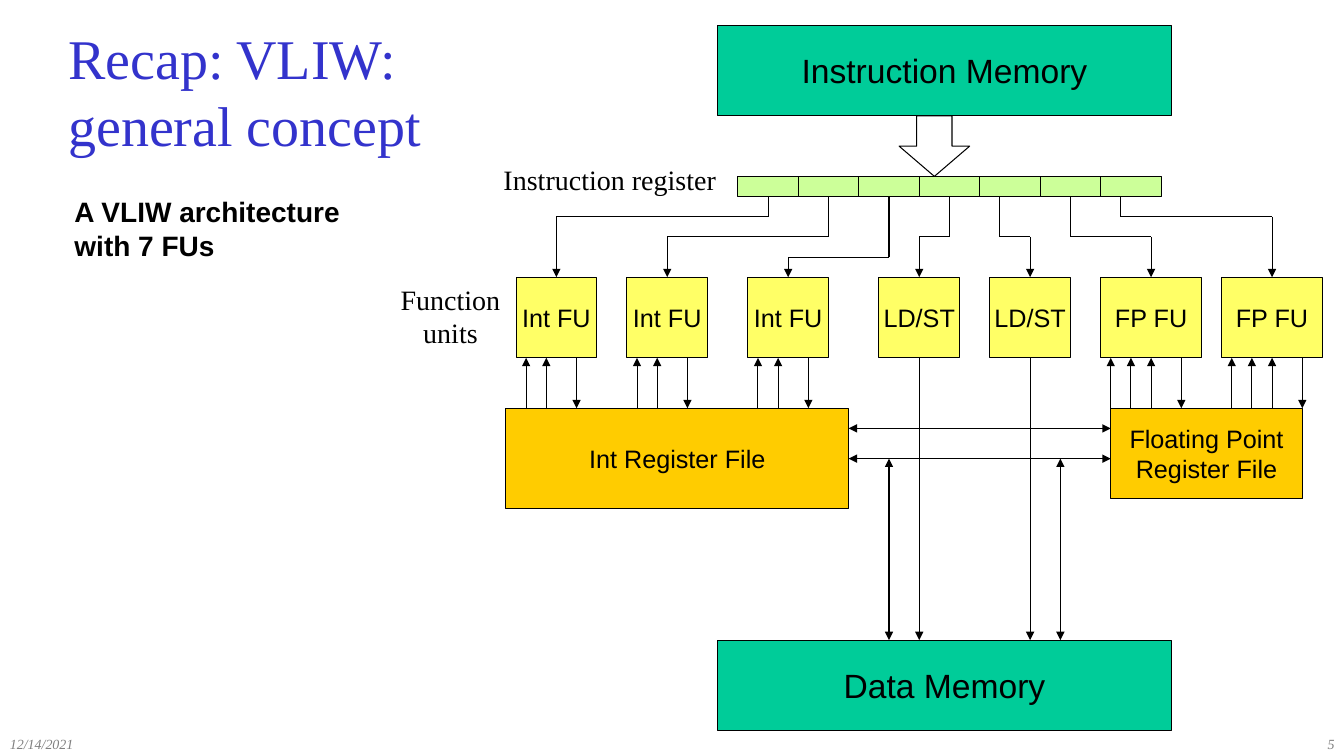
from dataclasses import dataclass
from typing import Optional

from lxml.etree import SubElement
from pptx import Presentation
from pptx.dml.color import RGBColor
from pptx.enum.shapes import MSO_CONNECTOR, MSO_SHAPE
from pptx.enum.text import MSO_ANCHOR, PP_ALIGN
from pptx.oxml.ns import qn
from pptx.shapes.autoshape import Shape
from pptx.shapes.connector import Connector
from pptx.slide import Slide
from pptx.text.text import TextFrame
from pptx.util import Pt

BLACK = RGBColor(0x00, 0x00, 0x00)
GREY = RGBColor(0x80, 0x80, 0x80)
TITLE_BLUE = RGBColor(0x33, 0x33, 0xCC)
MEMORY_GREEN = RGBColor(0x00, 0xCC, 0x99)
SLOT_GREEN = RGBColor(0xCC, 0xFF, 0x99)
UNIT_YELLOW = RGBColor(0xFF, 0xFF, 0x66)
FILE_ORANGE = RGBColor(0xFF, 0xCC, 0x00)

SANS = "Arial"
SERIF = "Times New Roman"
LINE_WIDTH = 0.75
TOP, BOTTOM, RIGHT = 0, 2, 3

SLOT_LEFT, SLOT_TOP, SLOT_WIDTH, SLOT_HEIGHT = 527.04, 126, 43.2, 14.4
SLOT_BOTTOM = SLOT_TOP + SLOT_HEIGHT
UNIT_TOP, UNIT_HEIGHT = 198, 57.6
UNIT_BOTTOM = UNIT_TOP + UNIT_HEIGHT
FILE_TOP = 291.6
MEMORY_LEFT, MEMORY_WIDTH, MEMORY_HEIGHT = 512.64, 324, 64.8
DATA_MEMORY_TOP = 457.2
INT_FILE_LEFT, INT_FILE_WIDTH = 361.44, 244.8
FP_FILE_LEFT = 793.44
BUS_Y = 327.6


@dataclass(frozen=True)
class TextStyle:
    size: float
    font: str = SANS
    color: RGBColor = BLACK
    bold: bool = False
    italic: bool = False
    align: PP_ALIGN = PP_ALIGN.LEFT
    anchor: MSO_ANCHOR = MSO_ANCHOR.TOP
    wrap: bool = True


@dataclass(frozen=True)
class Block:
    left: float
    top: float
    width: float
    height: float
    lines: tuple[str, ...] = ()
    style: Optional[TextStyle] = None
    fill: Optional[RGBColor] = None
    preset: MSO_SHAPE = MSO_SHAPE.RECTANGLE


@dataclass(frozen=True)
class FunctionUnit:
    label: str
    left: float
    width: float
    bend_level: int
    tap_shift: float = 0
    inputs: tuple[float, ...] = ()
    output: Optional[float] = None

    @property
    def center(self) -> float:
        return self.left + self.width / 2


@dataclass(frozen=True)
class Joint:
    shape: Shape
    side: int


MEMORY_TEXT = TextStyle(24, align=PP_ALIGN.CENTER, anchor=MSO_ANCHOR.MIDDLE, wrap=False)
UNIT_TEXT = TextStyle(18, align=PP_ALIGN.CENTER, anchor=MSO_ANCHOR.MIDDLE, wrap=False)
CAPTION_TEXT = TextStyle(20, SERIF, align=PP_ALIGN.CENTER, wrap=False)
INT_PORTS = {"inputs": (7.2, 21.6), "output": 43.2}
FP_PORTS = {"inputs": (7.2, 21.6, 36), "output": 57.6}

UNITS = (
    FunctionUnit("Int FU", 368.64, 57.6, 1, **INT_PORTS),
    FunctionUnit("Int FU", 447.84, 57.6, 2, **INT_PORTS),
    FunctionUnit("Int FU", 534.24, 57.6, 3, **INT_PORTS),
    FunctionUnit("LD/ST", 627.84, 57.6, 2),
    FunctionUnit("LD/ST", 707.04, 57.6, 2, tap_shift=-7.2),
    FunctionUnit("FP FU", 786.24, 72, 2, **FP_PORTS),
    FunctionUnit("FP FU", 872.64, 72, 1, tap_shift=-7.2, **FP_PORTS),
)
TEXTS = (
    Block(41.76, 18, 478, 92.9, ("Recap: VLIW:\vgeneral concept",),
          TextStyle(40, SERIF, TITLE_BLUE, anchor=MSO_ANCHOR.MIDDLE)),
    Block(0, 522, 128, 18, ("12/14/2021",), TextStyle(10, SERIF, GREY, italic=True)),
    Block(760.3, 522, 200, 18, ("5",),
          TextStyle(10, SERIF, GREY, italic=True, align=PP_ALIGN.RIGHT)),
    Block(46.1, 135.4, 210.2, 55.4, ("A VLIW architecture with 7 FUs",),
          TextStyle(20, bold=True)),
    Block(344.9, 112.3, 181.4, 34.6, ("Instruction register",), CAPTION_TEXT),
    Block(275, 198, 93.6, 59.8, ("Function", "units"), CAPTION_TEXT),
)
INT_FILE = Block(INT_FILE_LEFT, FILE_TOP, INT_FILE_WIDTH, 72,
                 ("Int Register File",), UNIT_TEXT, FILE_ORANGE)
FP_FILE = Block(FP_FILE_LEFT, FILE_TOP, 136.8, 64.8,
                ("Floating Point", "Register File"), UNIT_TEXT, FILE_ORANGE)
MEMORIES = tuple(
    Block(MEMORY_LEFT, top, MEMORY_WIDTH, MEMORY_HEIGHT, (name,), MEMORY_TEXT, MEMORY_GREEN)
    for name, top in (("Instruction Memory", 18), ("Data Memory", DATA_MEMORY_TOP))
)
FETCH_ARROW = Block(642.24, 82.8, 50.4, 43.2, preset=MSO_SHAPE.DOWN_ARROW)


def fill_text(frame: TextFrame, lines: tuple[str, ...], style: TextStyle) -> None:
    frame.word_wrap = style.wrap
    frame.vertical_anchor = style.anchor
    for index, line in enumerate(lines):
        paragraph = frame.add_paragraph() if index else frame.paragraphs[0]
        paragraph.alignment = style.align
        for part_index, part in enumerate(line.split("\v")):
            if part_index:
                paragraph.add_line_break()
            run = paragraph.add_run()
            run.text = part
            run.font.size = Pt(style.size)
            run.font.name = style.font
            run.font.bold = style.bold
            run.font.italic = style.italic
            run.font.color.rgb = style.color


def draw_text(slide: Slide, block: Block) -> None:
    box = slide.shapes.add_textbox(
        Pt(block.left), Pt(block.top), Pt(block.width), Pt(block.height))
    fill_text(box.text_frame, block.lines, block.style)


def draw_block(slide: Slide, block: Block) -> Shape:
    shape = slide.shapes.add_shape(
        block.preset, Pt(block.left), Pt(block.top), Pt(block.width), Pt(block.height))
    shape.shadow.inherit = False
    if block.fill is None:
        shape.fill.background()
    else:
        shape.fill.solid()
        shape.fill.fore_color.rgb = block.fill
    shape.line.color.rgb = BLACK
    shape.line.width = Pt(LINE_WIDTH)
    if block.style:
        fill_text(shape.text_frame, block.lines, block.style)
    return shape


def draw_wire(slide: Slide, start: tuple[float, float], end: tuple[float, float],
              heads: tuple[str, ...] = ("tailEnd",), begin: Optional[Joint] = None,
              finish: Optional[Joint] = None) -> Connector:
    wire = slide.shapes.add_connector(
        MSO_CONNECTOR.STRAIGHT, Pt(start[0]), Pt(start[1]), Pt(end[0]), Pt(end[1]))
    if begin:
        wire.begin_connect(begin.shape, begin.side)
    if finish:
        wire.end_connect(finish.shape, finish.side)
    wire.line.color.rgb = BLACK
    wire.line.width = Pt(LINE_WIDTH)
    properties = wire._element.spPr
    outline = properties.find(qn("a:ln"))
    for head in heads:
        SubElement(outline, qn(f"a:{head}"), type="triangle")
    SubElement(properties, qn("a:effectLst"))
    return wire


def draw_unit(slide: Slide, unit: FunctionUnit, index: int) -> None:
    box = draw_block(slide, Block(unit.left, UNIT_TOP, unit.width, UNIT_HEIGHT,
                                  (unit.label,), UNIT_TEXT, UNIT_YELLOW))
    slot_left = SLOT_LEFT + index * SLOT_WIDTH
    slot = draw_block(slide, Block(slot_left, SLOT_TOP, SLOT_WIDTH, SLOT_HEIGHT, fill=SLOT_GREEN))
    tap = slot_left + SLOT_WIDTH / 2 + unit.tap_shift
    bend = SLOT_BOTTOM + unit.bend_level * 14.4
    slot_joint = None if unit.tap_shift else Joint(slot, BOTTOM)
    draw_wire(slide, (tap, SLOT_BOTTOM), (tap, bend), (), begin=slot_joint)
    draw_wire(slide, (tap, bend), (unit.center, bend), ())
    draw_wire(slide, (unit.center, bend), (unit.center, UNIT_TOP), finish=Joint(box, TOP))
    for offset in unit.inputs:
        port = unit.left + offset
        joint = Joint(box, BOTTOM) if offset == unit.width / 2 else None
        draw_wire(slide, (port, FILE_TOP), (port, UNIT_BOTTOM), finish=joint)
    if unit.output is None:
        draw_wire(slide, (unit.center, UNIT_BOTTOM), (unit.center, DATA_MEMORY_TOP),
                  begin=Joint(box, BOTTOM))
    else:
        port = unit.left + unit.output
        draw_wire(slide, (port, UNIT_BOTTOM), (port, FILE_TOP))


def main() -> None:
    deck = Presentation()
    deck.slide_width, deck.slide_height = Pt(960), Pt(540)
    slide = deck.slides.add_slide(deck.slide_layouts[6])
    for text in TEXTS:
        draw_text(slide, text)
    for memory in MEMORIES:
        draw_block(slide, memory)
    int_file = draw_block(slide, INT_FILE)
    draw_block(slide, FP_FILE)
    for index, unit in enumerate(UNITS):
        draw_unit(slide, unit, index)
    draw_block(slide, FETCH_ARROW)
    both = ("headEnd", "tailEnd")
    int_file_right = INT_FILE_LEFT + INT_FILE_WIDTH
    for y, joint in ((306, None), (BUS_Y, Joint(int_file, RIGHT))):
        draw_wire(slide, (int_file_right, y), (FP_FILE_LEFT, y), both, begin=joint)
    for x in (635.04, 757.44):
        draw_wire(slide, (x, BUS_Y), (x, DATA_MEMORY_TOP), both)
    deck.save("out.pptx")


if __name__ == "__main__":
    main()
